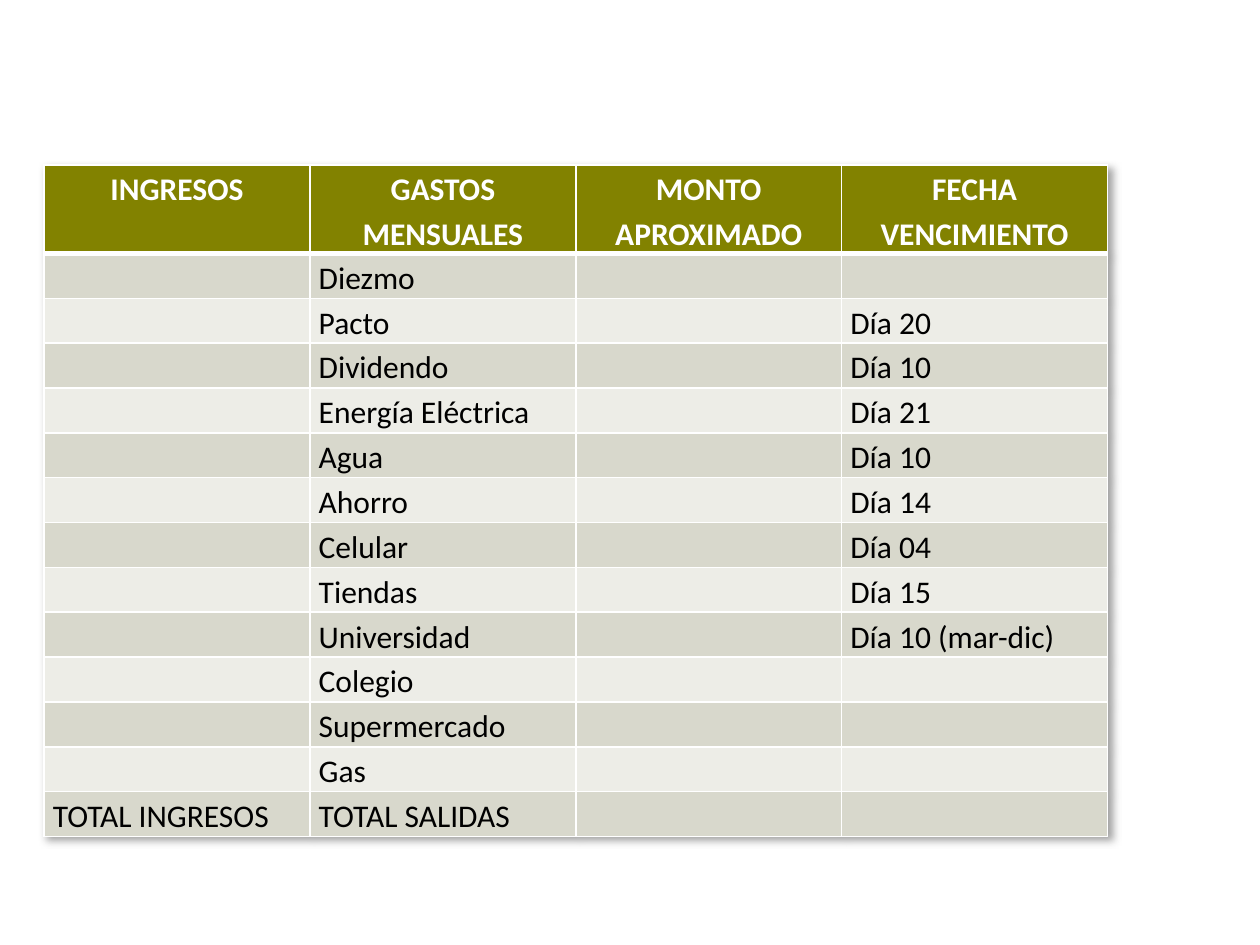
from lxml import etree
from pptx import Presentation
from pptx import util as u
from pptx.dml.color import RGBColor
from pptx.enum import text
from pptx.oxml import ns

WHITE = RGBColor(0xFF, 0xFF, 0xFF)
BLACK = RGBColor(0, 0, 0)
OLIVE = RGBColor(0x82, 0x82, 0x00)
BANDS = (RGBColor(0xED, 0xED, 0xE7), RGBColor(0xD8, 0xD8, 0xCC))
SHADOW = RGBColor(0x60, 0x60, 0x60)

HEADINGS = ("INGRESOS", "GASTOS MENSUALES", "MONTO APROXIMADO", "FECHA VENCIMIENTO")
EXPENSES = (
    ("Diezmo", ""),
    ("Pacto", "Día 20"),
    ("Dividendo", "Día 10"),
    ("Energía Eléctrica", "Día 21"),
    ("Agua", "Día 10"),
    ("Ahorro", "Día 14"),
    ("Celular", "Día 04"),
    ("Tiendas", "Día 15"),
    ("Universidad", "Día 10 (mar-dic)"),
    ("Colegio", ""),
    ("Supermercado", ""),
    ("Gas", ""),
)
TOTALS = ("TOTAL INGRESOS", "TOTAL SALIDAS", "", "")

HEADER_FORMAT = {"bold": True, "size": u.Pt(18), "name": "Calibri"}
BODY_FORMAT = {**HEADER_FORMAT, "bold": False}
CELL_FORMAT = {"margin_left": u.Inches(0.07), "margin_right": u.Inches(0.07),
               "margin_top": 0, "margin_bottom": 0}
HEADER_SHARE, BODY_SHARE = 0.11, 0.87


def set_all(target, values):
    for name, value in values.items():
        setattr(target, name, value)


def add_color(parent, color):
    fill = etree.SubElement(parent, ns.qn("a:solidFill"))
    etree.SubElement(fill, ns.qn("a:srgbClr"), val=str(color))


def add_borders(cell, widths):
    """Draw white cell edges; widths maps L, R, T and B to points."""
    properties = cell._tc.get_or_add_tcPr()
    for side, width in widths.items():
        line = etree.SubElement(properties, ns.qn(f"a:ln{side}"), w=str(u.Pt(width)))
        add_color(line, WHITE)


def add_table_shadow(table):
    effects = etree.Element(ns.qn("a:effectLst"))
    shadow = etree.SubElement(effects, ns.qn("a:outerShdw"), blurRad=str(u.Pt(4)),
                              dist=str(u.Pt(3)), dir="2700000", algn="tl", rotWithShape="0")
    color = etree.SubElement(shadow, ns.qn("a:srgbClr"), val=str(SHADOW))
    etree.SubElement(color, ns.qn("a:alpha"), val="60000")
    table._tbl.tblPr.insert(0, effects)


def fill_cell(cell, words, row):
    is_header = row == 0
    add_borders(cell, {"L": 1, "R": 1, "T": 3 if row == 1 else 1, "B": 3 if is_header else 1})
    set_all(cell, CELL_FORMAT)
    cell.fill.solid()
    cell.fill.fore_color.rgb = OLIVE if is_header else BANDS[row % 2]
    if not words:
        return
    para = cell.text_frame.paragraphs[0]
    para.line_spacing = 1.15
    para.alignment = text.PP_ALIGN.CENTER if is_header else text.PP_ALIGN.LEFT
    span = para.add_run()
    span.text = words
    set_all(span.font, HEADER_FORMAT if is_header else BODY_FORMAT)
    span.font.color.rgb = WHITE if is_header else BLACK


def add_budget_table(page, left, top, width, height):
    body = [("", expense, "", due) for expense, due in EXPENSES]
    rows = [HEADINGS, *body, TOTALS]
    table = page.shapes.add_table(len(rows), len(HEADINGS), left, top, width, height).table
    add_table_shadow(table)
    for column in table.columns:
        column.width = int(width / len(HEADINGS))
    for index, words in enumerate(rows):
        share = BODY_SHARE / (len(rows) - 1) if index else HEADER_SHARE
        table.rows[index].height = int(height * share)
        for cell, label in zip(table.rows[index].cells, words):
            fill_cell(cell, label, index)


def main():
    deck = Presentation()
    deck.slide_width, deck.slide_height = u.Inches(10), u.Inches(7.5)
    page = deck.slides.add_slide(deck.slide_layouts[6])
    add_budget_table(page, u.Inches(0.35), u.Inches(1.31), u.Inches(8.44), u.Inches(5.32))
    deck.save("out.pptx")


if __name__ == "__main__":
    main()
